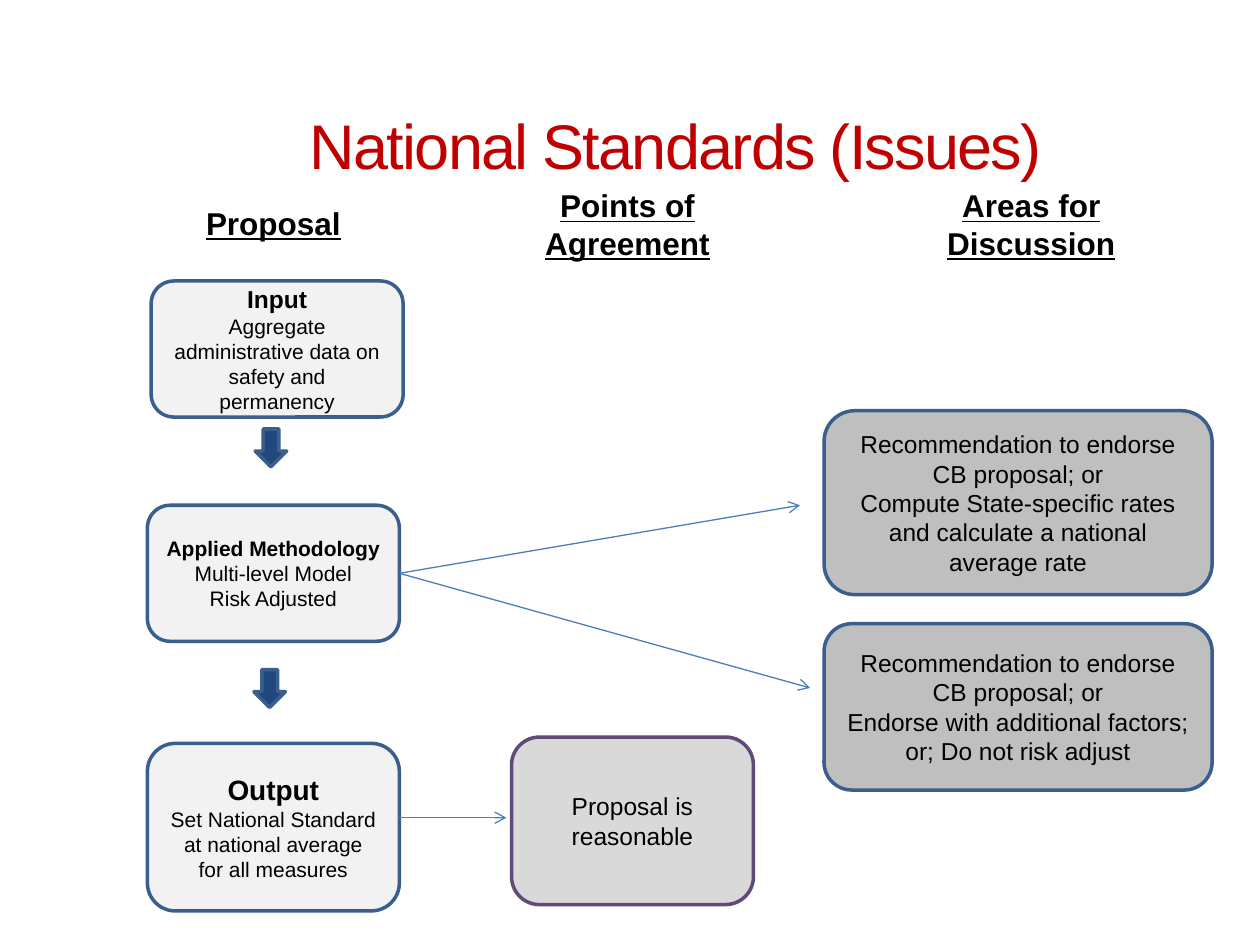
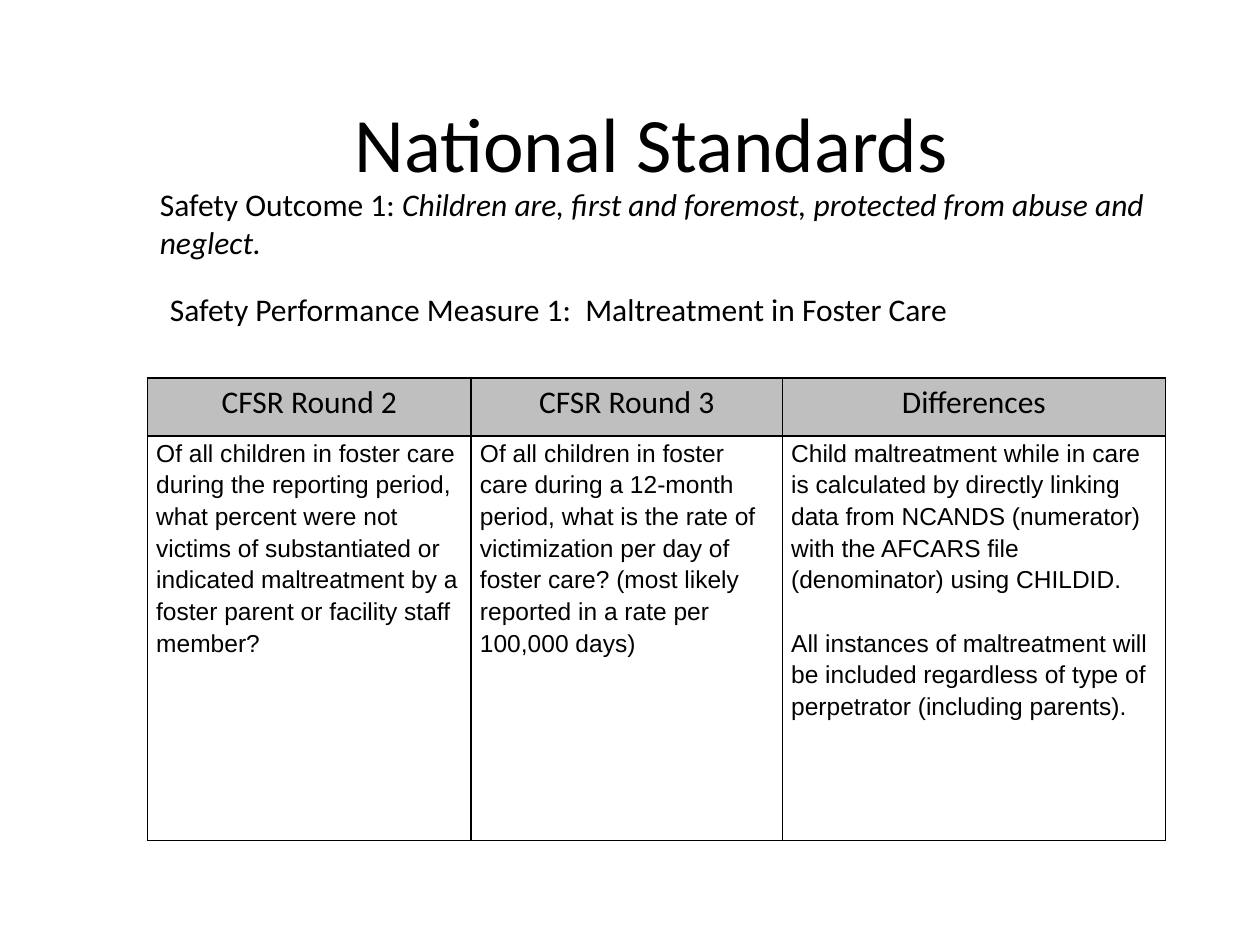
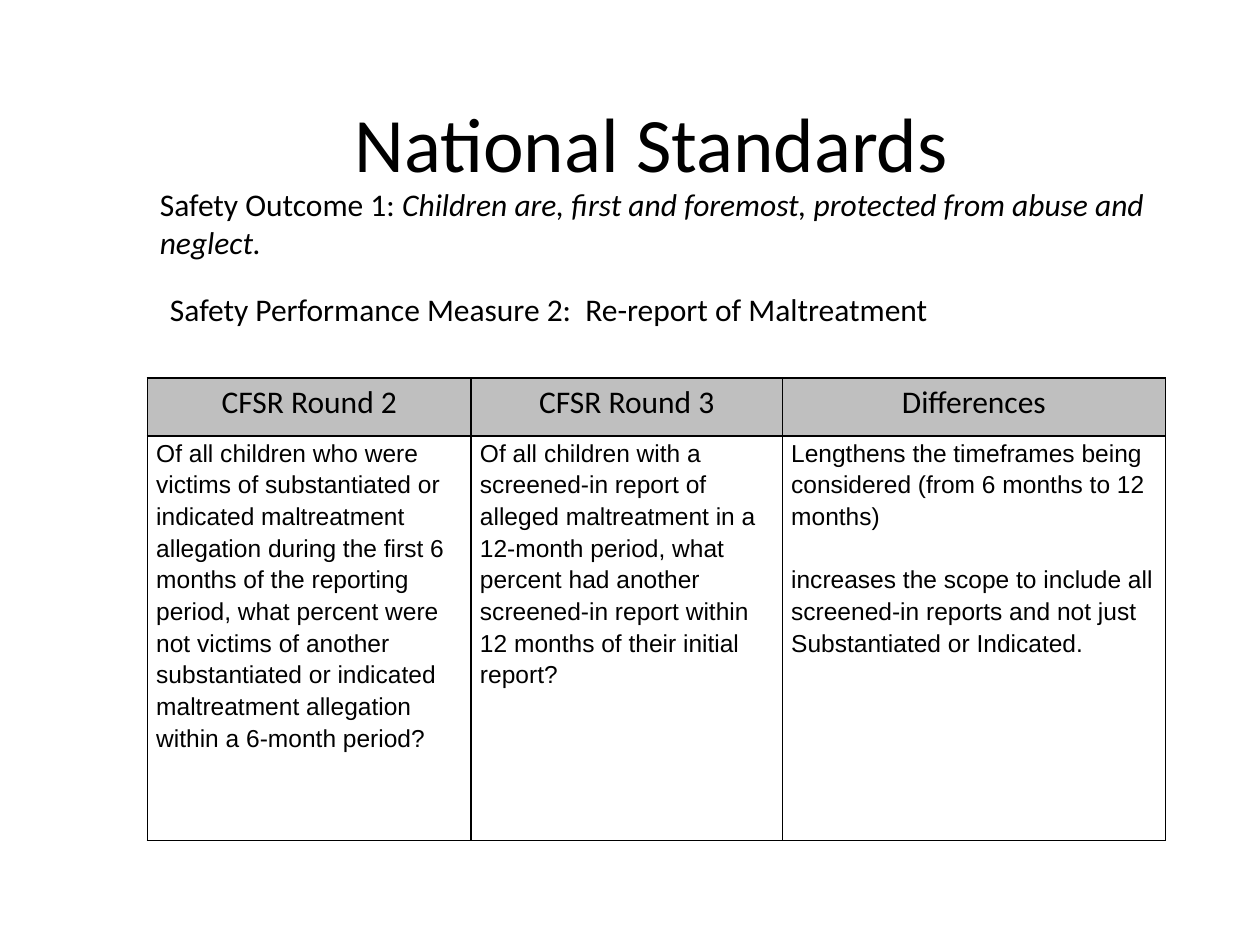
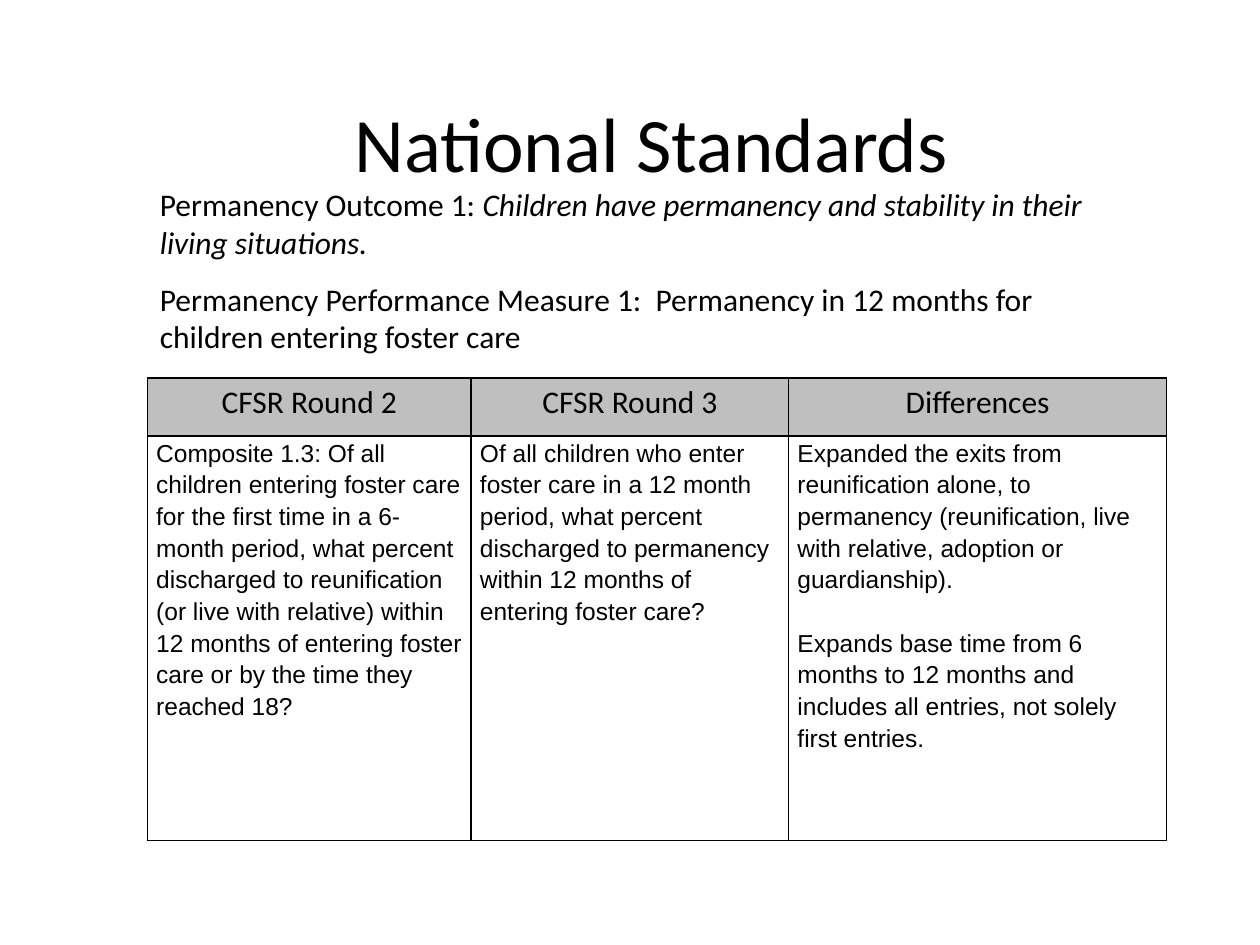
from lxml.etree import SubElement
from pptx import Presentation
from pptx.dml.color import RGBColor
from pptx.enum.shapes import MSO_CONNECTOR, MSO_SHAPE
from pptx.enum.text import MSO_ANCHOR, PP_ALIGN
from pptx.oxml.ns import qn
from pptx.util import Pt

PX = 9144  # 100 px to the inch
BLACK, RED, NAVY = "000000", "C00000", "1F497D"
BLUE, PURPLE, ARROW = "3A5F8C", "5F4A78", "4B7EBC"
PALE, LIGHT, GREY = "F2F2F2", "D9D9D9", "BFBFBF"
CENTER, LEFT = PP_ALIGN.CENTER, PP_ALIGN.LEFT
MIDDLE, TOP = MSO_ANCHOR.MIDDLE, MSO_ANCHOR.TOP
hx = RGBColor.from_string


def write(tf, lines, font="Arial", color=BLACK, align=CENTER, anchor=TOP):
    """Fill a text frame with (text, size, bold) lines."""
    tf.word_wrap = True
    tf.vertical_anchor = anchor
    for i, (text, size, bold) in enumerate(lines):
        p = tf.add_paragraph() if i else tf.paragraphs[0]
        p.text = text
        p.alignment = align
        p.font.name, p.font.size, p.font.bold = font, Pt(size), bold
        p.font.color.rgb = hx(color)
    return tf.paragraphs[0]


def add_shape(s, kind, box, fill, line):
    sp = s.shapes.add_shape(kind, *[v * PX for v in box])
    sp.shadow.inherit = False
    sp.fill.solid()
    sp.fill.fore_color.rgb = hx(fill)
    sp.line.color.rgb = hx(line)
    sp.line.width = Pt(2)
    return sp


prs = Presentation()
prs.slide_width, prs.slide_height = 1000 * PX, 750 * PX
blank = prs.slide_layouts[6]

# Slide 1: issues flow
s = prs.slides.add_slide(blank)
tb = s.shapes.add_textbox(120 * PX, 67 * PX, 833 * PX, 95 * PX)
p = write(tb.text_frame, [("National Standards (Issues)", 36, False)], color=RED, anchor=MIDDLE)
p.runs[0]._r.get_or_add_rPr().set("spc", "-100")

# Column headings
for text, box in [
    ("Proposal", (138, 157, 158, 39)),
    ("Points of Agreement", (402, 143, 192, 68)),
    ("Areas for Discussion", (727, 143, 183, 68)),
]:
    tb = s.shapes.add_textbox(*[v * PX for v in box])
    write(tb.text_frame, [(text, 18, True)]).font.underline = True

# Boxes
endorse = ("Recommendation to endorse CB proposal; or", 14, False)
for box, fill, line, lines in [
    ((120, 223, 200, 108), PALE, BLUE, [
        ("Input", 14, True),
        ("Aggregate administrative data on safety and permanency", 12, False)]),
    ((117, 401, 200, 108), PALE, BLUE, [
        ("Applied Methodology", 12, True),
        ("Multi-level Model", 12, False),
        ("Risk Adjusted", 12, False)]),
    ((117, 590, 200, 133), PALE, BLUE, [
        ("Output", 16, True),
        ("Set National Standard at national average", 12, False),
        ("for all measures", 12, False)]),
    ((406, 585, 192, 133), LIGHT, PURPLE, [("Proposal is reasonable", 14, False)]),
    ((654, 326, 308, 146), GREY, BLUE, [
        endorse,
        ("Compute State-specific rates and calculate a national average rate", 14, False)]),
    ((654, 495, 308, 132), GREY, BLUE, [
        endorse,
        ("Endorse with additional factors; or; Do not risk adjust", 14, False)]),
]:
    sp = add_shape(s, MSO_SHAPE.ROUNDED_RECTANGLE, box, fill, line)
    write(sp.text_frame, lines, anchor=MIDDLE)

# Block arrows between the proposal steps
for x, y in [(200, 343), (199, 534)]:
    add_shape(s, MSO_SHAPE.RIGHT_ARROW, (x, y, 30, 25), NAVY, BLUE).rotation = 90

# Thin arrows to the other columns
for ends in [(317, 455, 635, 401), (317, 455, 643, 546), (316, 649, 402, 649)]:
    cx = s.shapes.add_connector(MSO_CONNECTOR.STRAIGHT, *[v * PX for v in ends])
    cx.line.color.rgb = hx(ARROW)
    cx.line.width = Pt(0.75)
    SubElement(cx.line._get_or_add_ln(), qn("a:tailEnd"), type="arrow")
    SubElement(cx._element.spPr, qn("a:effectLst"))

# Slides 2 to 4: one measure each
safety = ("Safety Outcome 1: ", "Children are, first and foremost, protected from abuse and neglect.")
permanency = ("Permanency Outcome 1: ", "Children have permanency and stability in their living situations.")
headers = ["CFSR Round 2", "CFSR Round 3", "Differences"]
measures = [
    (safety, "Safety Performance Measure 1:  Maltreatment in Foster Care",
     (125, 225, 650, 40), (257, 247, 304), [
        ["Of all children in foster care during the reporting period, what percent were not "
         "victims of substantiated or indicated maltreatment by a foster parent or facility "
         "staff member?"],
        ["Of all children in foster care during a 12-month period, what is the rate of "
         "victimization per day of foster care? (most likely reported in a rate per "
         "100,000 days)"],
        ["Child maltreatment while in care is calculated by directly linking data from NCANDS "
         "(numerator) with the AFCARS file (denominator) using CHILDID.",
         "All instances of maltreatment will be included regardless of type of perpetrator "
         "(including parents)."]]),
    (safety, "Safety Performance Measure 2:  Re-report of Maltreatment",
     (125, 225, 629, 40), (257, 247, 304), [
        ["Of all children who were victims of substantiated or indicated maltreatment "
         "allegation during the first 6 months of the reporting period, what percent were not "
         "victims of another substantiated or indicated maltreatment allegation within a "
         "6-month period?"],
        ["Of all children with a screened-in report of alleged maltreatment in a 12-month "
         "period, what percent had another screened-in report within 12 months of their "
         "initial report?"],
        ["Lengthens the timeframes being considered (from 6 months to 12 months)",
         "increases the scope to include all screened-in reports and not just Substantiated "
         "or Indicated."]]),
    (permanency,
     "Permanency Performance Measure 1:  Permanency in 12 months for children entering foster care",
     (117, 217, 800, 71), (257, 252, 300), [
        ["Composite 1.3: Of all children entering foster care for the first time in a 6-month "
         "period, what percent discharged to reunification (or live with relative) within 12 "
         "months of entering foster care or by the time they reached 18?"],
        ["Of all children who enter foster care in a 12 month period, what percent discharged "
         "to permanency within 12 months of entering foster care?"],
        ["Expanded the exits from reunification alone, to permanency (reunification, live with "
         "relative, adoption or guardianship).",
         "Expands base time from 6 months to 12 months and includes all entries, not solely "
         "first entries."]]),
]

for (label, outcome), measure, measure_box, widths, body in measures:
    s = prs.slides.add_slide(blank)
    tb = s.shapes.add_textbox(67 * PX, 50 * PX, 900 * PX, 125 * PX)
    write(tb.text_frame, [("National Standards", 44, False)], "Calibri", anchor=MIDDLE)

    # Comparison table
    table = s.shapes.add_table(2, 3, 117 * PX, 300 * PX, sum(widths) * PX, 367 * PX).table
    table.first_row = table.horz_banding = False
    for row, height in zip(table.rows, (46, 321)):
        row.height = height * PX
    for c, width in enumerate(widths):
        table.columns[c].width = width * PX
        head, cell = table.cell(0, c), table.cell(1, c)
        write(head.text_frame, [(headers[c], 18, False)], "Calibri")
        write(cell.text_frame, [(text, 14, False) for text in body[c]], align=LEFT)
        for p in cell.text_frame.paragraphs[1:]:
            p.space_before = Pt(18)
        for tc in (head, cell):
            tc.margin_left = tc.margin_right = 7 * PX
            tc.margin_top = tc.margin_bottom = 0
            for p in tc.text_frame.paragraphs:
                p.line_spacing = 1.15
            for side in ("lnL", "lnR", "lnT", "lnB"):
                ln = SubElement(tc._tc.get_or_add_tcPr(), qn("a:" + side), w=str(Pt(1)))
                SubElement(SubElement(ln, qn("a:solidFill")), qn("a:srgbClr"), val=BLACK)
        head.fill.solid()
        head.fill.fore_color.rgb = hx(GREY)
        cell.fill.background()

    # Outcome and measure
    tb = s.shapes.add_textbox(117 * PX, 142 * PX, 808 * PX, 71 * PX)
    p = write(tb.text_frame, [(label, 18, False)], "Calibri", align=LEFT)
    r = p.add_run()
    r.text = outcome
    r.font.italic = True
    tb = s.shapes.add_textbox(*[v * PX for v in measure_box])
    write(tb.text_frame, [(measure, 18, False)], "Calibri", align=LEFT)

prs.save("out.pptx")
